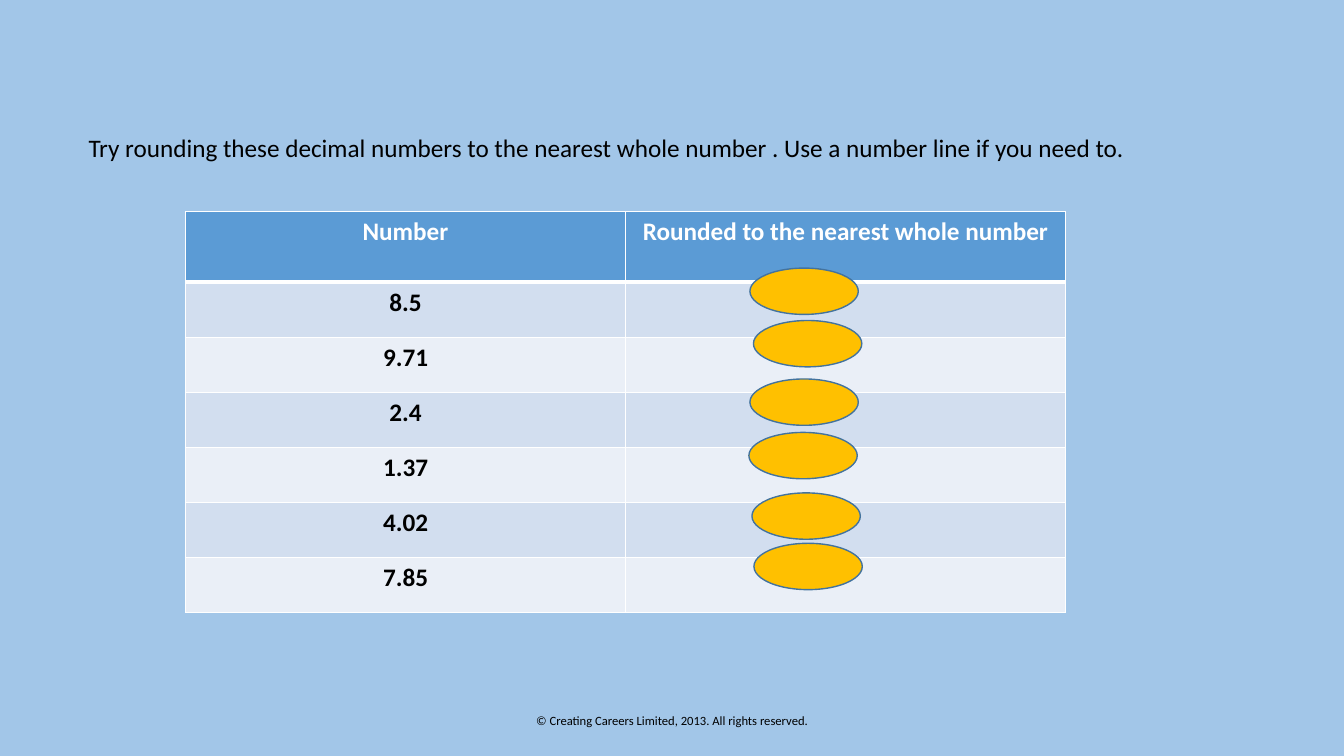
from dataclasses import dataclass

from lxml import etree
from pptx import Presentation
from pptx.dml.color import RGBColor
from pptx.enum.shapes import MSO_SHAPE
from pptx.enum.text import MSO_ANCHOR, PP_ALIGN
from pptx.oxml.ns import qn
from pptx.util import Emu, Inches, Pt

CENTER, LEFT = PP_ALIGN.CENTER, PP_ALIGN.LEFT
TOP, MIDDLE = MSO_ANCHOR.TOP, MSO_ANCHOR.MIDDLE
OVAL = MSO_SHAPE.OVAL

# The slide is a grid of 160 columns by 90 rows
COLUMNS, ROWS = 160, 90
WIDTH, HEIGHT = Inches(13.33), Inches(7.5)
FONT = "Calibri"
COLORS = {
    "background": "A2C6E8",
    "text": "000000",
    "white": "FFFFFF",
    "header": "5B9BD5",
    "odd_row": "D2DEEF",
    "even_row": "EAEFF7",
    "cover": "FFC000",
    "cover_line": "43739E",
}


@dataclass(frozen=True)
class Label:
    text: str
    column: float
    row: float
    columns: float
    rows: float
    size: float
    align: PP_ALIGN
    anchor: MSO_ANCHOR


@dataclass(frozen=True)
class Exercise:
    number: str
    cover_column: float
    cover_row: float


LABELS = [
    Label("© Creating Careers Limited, 2013. All rights reserved.",
          53, 83.4, 54, 4.8, 9, CENTER, MIDDLE),
    Label("Try rounding these decimal numbers to the nearest whole number . "
          "Use a number line if you need to.",
          9.36, 15.12, 130.56, 4.8, 18, LEFT, TOP),
]
HEADINGS = ("Number", "Rounded to the nearest whole number")
EXERCISES = [
    Exercise("8.5", 89.28, 31.92),
    Exercise("9.71", 89.7, 38.16),
    Exercise("2.4", 89.28, 45.12),
    Exercise("1.37", 89.16, 51.48),
    Exercise("4.02", 89.52, 58.68),
    Exercise("7.85", 89.76, 64.68),
]
TABLE_COLUMN, TABLE_ROW = 22.08, 25.2
CELL_COLUMNS, HEADER_ROWS, BODY_ROWS = 52.4, 8.4, 6.56
COVER_COLUMNS, COVER_ROWS = 12.9, 5.52


def across(columns: float) -> Emu:
    return Emu(round(WIDTH * columns / COLUMNS))


def down(rows: float) -> Emu:
    return Emu(round(HEIGHT * rows / ROWS))


def color(name: str) -> RGBColor:
    return RGBColor.from_string(COLORS[name])


def write(paragraph, text: str, size: float, align: PP_ALIGN,
          color_name: str, bold: bool = False) -> None:
    paragraph.text = text
    paragraph.alignment = align
    font = paragraph.font
    font.name, font.size, font.bold = FONT, Pt(size), bold
    font.color.rgb = color(color_name)


def add_label(slide, label: Label) -> None:
    shape = slide.shapes.add_textbox(across(label.column), down(label.row),
                                     across(label.columns), down(label.rows))
    frame = shape.text_frame
    frame.word_wrap = True
    frame.vertical_anchor = label.anchor
    write(frame.paragraphs[0], label.text, label.size, label.align, "text")


def set_borders(cell, top: float, bottom: float) -> None:
    properties = cell._tc.get_or_add_tcPr()
    for side, points in (("L", 1), ("R", 1), ("T", top), ("B", bottom)):
        line = etree.SubElement(properties, qn(f"a:ln{side}"), w=str(Pt(points)))
        fill = etree.SubElement(line, qn("a:solidFill"))
        etree.SubElement(fill, qn("a:srgbClr"), val=COLORS["white"])


def add_number_table(slide) -> None:
    records = [HEADINGS] + [(exercise.number, "") for exercise in EXERCISES]
    heights = [HEADER_ROWS] + [BODY_ROWS] * len(EXERCISES)
    table = slide.shapes.add_table(
        len(records), len(HEADINGS), across(TABLE_COLUMN), down(TABLE_ROW),
        across(CELL_COLUMNS * len(HEADINGS)), down(sum(heights))).table
    for column in table.columns:
        column.width = across(CELL_COLUMNS)
    for index, (record, height) in enumerate(zip(records, heights)):
        table.rows[index].height = down(height)
        is_header = index == 0
        fill_name = "header" if is_header else "odd_row" if index % 2 else "even_row"
        for cell, text in zip(table.rows[index].cells, record):
            # Borders come before the fill in the cell properties
            set_borders(cell, 3 if index == 1 else 1, 3 if is_header else 1)
            cell.fill.solid()
            cell.fill.fore_color.rgb = color(fill_name)
            write(cell.text_frame.paragraphs[0], text, 18, CENTER,
                  "white" if is_header else "text", True)


def add_cover(slide, exercise: Exercise) -> None:
    shape = slide.shapes.add_shape(
        OVAL, across(exercise.cover_column), down(exercise.cover_row),
        across(COVER_COLUMNS), down(COVER_ROWS))
    shape.shadow.inherit = False
    shape.fill.solid()
    shape.fill.fore_color.rgb = color("cover")
    shape.line.color.rgb = color("cover_line")
    shape.line.width = Pt(1)


def main() -> None:
    presentation = Presentation()
    presentation.slide_width, presentation.slide_height = WIDTH, HEIGHT
    slide = presentation.slides.add_slide(presentation.slide_layouts[6])
    slide.background.fill.solid()
    slide.background.fill.fore_color.rgb = color("background")

    # Instruction and copyright line
    for label in LABELS:
        add_label(slide, label)

    # Numbers, with an oval over each answer
    add_number_table(slide)
    for exercise in EXERCISES:
        add_cover(slide, exercise)

    presentation.save("out.pptx")


if __name__ == "__main__":
    main()
